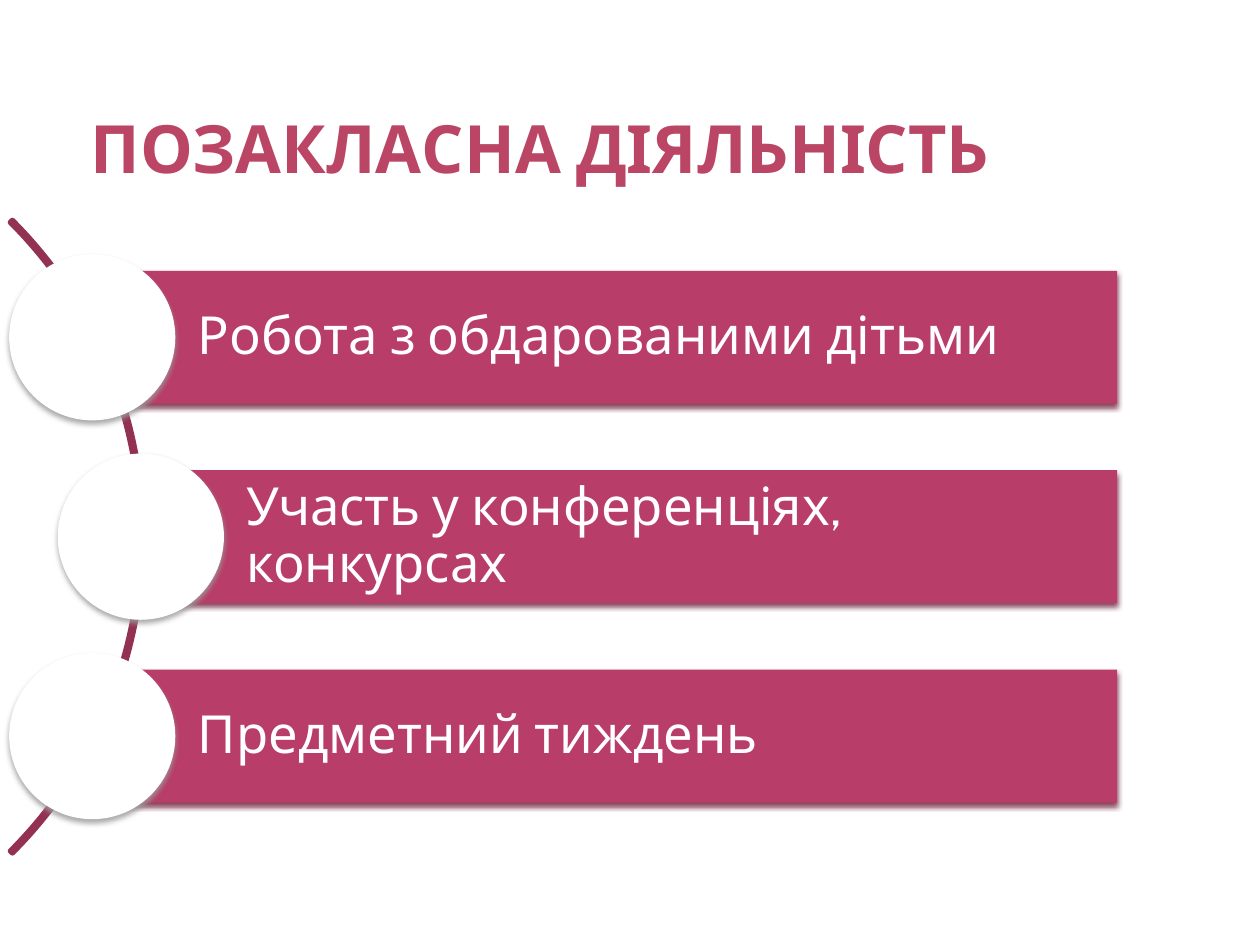
from lxml import etree
from pptx import Presentation
from pptx import util as u
from pptx.dml.color import RGBColor
from pptx.enum import shapes, text
from pptx.oxml.ns import qn

FONT = "Cabin"
HUES = {
    "title": "BA4565",
    "arc": "933153",
    "bar": "B83D68",
    "bar_shade": "722640",
    "disc": "FFFFFF",
    "disc_shade": "9D9D9D",
    "label": "FFFFFF",
}
ROWS = [
    ("Робота з обдарованими дітьми", 1.86),
    ("Участь у конференціях, конкурсах", 2.84),
    ("Предметний тиждень", 1.86),
]
RIGHT, MID, STEP = 22.52, 10.82, 4.02
BAR, DISC, ARC = 2.68, 3.35, 18.03


def hue(name):
    """Return the named colour."""
    return RGBColor.from_string(HUES[name])


def add_shade(shape, name):
    """Give a shape a soft shadow that falls straight down."""
    props = shape._element.spPr
    for old in props.findall(qn("a:effectLst")):
        props.remove(old)
    list_ = etree.SubElement(props, qn("a:effectLst"))
    shade = etree.SubElement(
        list_, qn("a:outerShdw"), blurRad=str(u.Pt(3.1)), dist=str(u.Pt(2)),
        dir="5400000", rotWithShape="0")
    tint = etree.SubElement(shade, qn("a:srgbClr"), val=HUES[name])
    etree.SubElement(tint, qn("a:alpha"), val="83000")


def add_form(slide, kind, box, fill):
    """Add a filled preset shape without an outline."""
    form = slide.shapes.add_shape(kind, *(u.Cm(n) for n in box))
    form.shadow.inherit = False
    form.fill.solid()
    form.fill.fore_color.rgb = hue(fill)
    form.line.fill.background()
    add_shade(form, fill + "_shade")
    return form


def set_text(shape, words, size, color, anchor, pads, bold=False):
    """Write one left-aligned paragraph into a shape."""
    frame = shape.text_frame
    frame.text = words
    frame.word_wrap = True
    frame.vertical_anchor = anchor
    (frame.margin_left, frame.margin_top,
     frame.margin_right, frame.margin_bottom) = (u.Cm(n) for n in pads)
    para = frame.paragraphs[0]
    para.alignment = text.PP_ALIGN.LEFT
    font = para.runs[0].font
    font.name, font.size, font.bold = FONT, u.Pt(size), bold
    font.color.rgb = hue(color)
    return para


def add_title(slide, words):
    """Add the slide heading."""
    box = slide.shapes.add_textbox(u.Cm(1.7), u.Cm(-0.69), u.Cm(19.2), u.Cm(4.45))
    set_text(box, words, 38, "title", text.MSO_ANCHOR.BOTTOM,
             (0.13, 0, 0.13, 0), bold=True)


def add_arc(slide):
    """Add the curve that links the rows."""
    arc = slide.shapes.add_shape(
        shapes.MSO_SHAPE.BLOCK_ARC, u.Cm(-15.14), u.Cm(MID - ARC / 2),
        u.Cm(ARC), u.Cm(ARC))
    arc.shadow.inherit = False
    for spot, value in enumerate((189, 27, 0.003)):
        arc.adjustments[spot] = value
    arc.fill.background()
    arc.line.color.rgb = hue("arc")
    arc.line.width = u.Pt(3.15)
    arc.line._ln.set("cap", "rnd")


def add_row(slide, words, left, mid):
    """Add a labelled bar with a disc centred on its left end."""
    bar = add_form(slide, shapes.MSO_SHAPE.RECTANGLE,
                   (left, mid - BAR / 2, RIGHT - left, BAR), "bar")
    para = set_text(bar, words, 30, "label", text.MSO_ANCHOR.MIDDLE,
                    (2.13, 0.2, 0.2, 0.2))
    para.line_spacing = 0.9
    add_form(slide, shapes.MSO_SHAPE.OVAL,
             (left - DISC / 2, mid - DISC / 2, DISC, DISC), "disc")


def main():
    """Build and save the slide."""
    deck = Presentation()
    deck.slide_width, deck.slide_height = u.Cm(25.4), u.Cm(19.05)
    slide = deck.slides.add_slide(deck.slide_layouts[6])
    add_title(slide, "ПОЗАКЛАСНА ДІЯЛЬНІСТЬ")
    add_arc(slide)
    for spot, (words, left) in enumerate(ROWS):
        add_row(slide, words, left, MID + (spot - 1) * STEP)
    deck.save("out.pptx")


if __name__ == "__main__":
    main()
